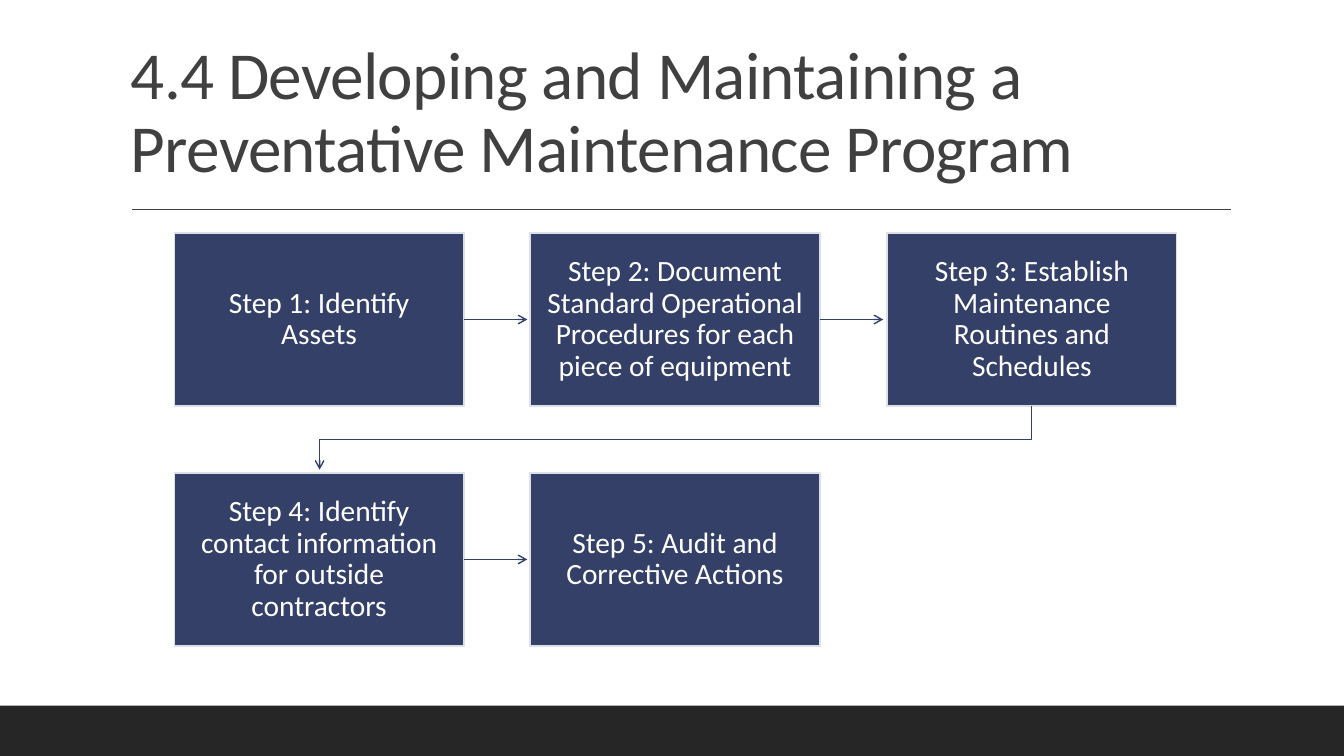
from lxml import etree
from pptx import Presentation
from pptx.dml.color import RGBColor
from pptx.enum.shapes import MSO_CONNECTOR, MSO_SHAPE
from pptx.enum.text import MSO_ANCHOR, PP_ALIGN
from pptx.oxml.ns import qn
from pptx.util import Pt

PX = 9144  # 100 px to the inch
RECT, STRAIGHT = MSO_SHAPE.RECTANGLE, MSO_CONNECTOR.STRAIGHT
BOTTOM, MIDDLE = MSO_ANCHOR.BOTTOM, MSO_ANCHOR.MIDDLE
LEFT, CENTER = PP_ALIGN.LEFT, PP_ALIGN.CENTER
NAVY, GREY, DARK, PALE, WHITE = "344068", "404040", "262626", "D9E0E6", "FFFFFF"
BOX_W, BOX_H, COLUMNS = 287, 172, 3
LEFT_X, TOP_Y, PITCH_X, PITCH_Y = 173, 231, 353.5, 238
ARROW = 63
STEPS = [
    "Step 1: Identify Assets",
    "Step 2: Document Standard Operational Procedures for each piece of equipment",
    "Step 3: Establish Maintenance Routines and Schedules",
    "Step 4: Identify contact information for outside contractors",
    "Step 5: Audit and Corrective Actions",
]


def style_line(shape, color, arrow=False):
    """Give a 1 pt line without shadow, with an open arrowhead if asked."""
    shape.line.color.rgb = RGBColor.from_string(color)
    shape.line.width = Pt(1)
    if arrow:
        etree.SubElement(shape.line._ln, qn("a:tailEnd"), type="arrow")
    etree.SubElement(shape._element.spPr, qn("a:effectLst"))


def write(shape, text, size, color, align, anchor, margins):
    tf = shape.text_frame
    frame = dict(word_wrap=True, vertical_anchor=anchor)
    for side, margin in zip(("left", "top", "right", "bottom"), margins):
        frame["margin_" + side] = margin * PX
    for name, value in frame.items():
        setattr(tf, name, value)
    p = tf.paragraphs[0]
    p.alignment, p.line_spacing = align, 0.9
    r = p.add_run()
    r.text = text
    for name, value in dict(name="Calibri", size=Pt(size)).items():
        setattr(r.font, name, value)
    r.font.color.rgb = RGBColor.from_string(color)
    return r


prs = Presentation()
prs.slide_width, prs.slide_height = 1333 * PX, 750 * PX
s = prs.slides.add_slide(prs.slide_layouts[6])

footer = s.shapes.add_shape(RECT, 0, 700 * PX, prs.slide_width, 50 * PX)
footer.shadow.inherit = False
footer.fill.solid()
footer.fill.fore_color.rgb = RGBColor.from_string(DARK)
footer.line.fill.background()

rule = s.shapes.add_connector(STRAIGHT, 131 * PX, 208 * PX, 1221 * PX, 208 * PX)
style_line(rule, GREY)

title = s.shapes.add_textbox(120 * PX, 31 * PX, 1100 * PX, 159 * PX)
r = write(title, "4.4 Developing and Maintaining a Preventative Maintenance Program",
          48, GREY, LEFT, BOTTOM, (10, 5, 10, 5))
r.font._element.set("spc", "-50")

for i, step in enumerate(STEPS):
    row, col = divmod(i, COLUMNS)
    x, y = int(LEFT_X + col * PITCH_X), TOP_Y + row * PITCH_Y
    box = s.shapes.add_shape(RECT, x * PX, y * PX, BOX_W * PX, BOX_H * PX)
    box.shadow.inherit = False
    box.fill.solid()
    box.fill.fore_color.rgb = RGBColor.from_string(NAVY)
    box.line.color.rgb = RGBColor.from_string(PALE)
    box.line.width = Pt(1.25)
    write(box, step, 21, WHITE, CENTER, MIDDLE, (14, 15, 14, 15))

    if i == len(STEPS) - 1:
        continue
    if col < COLUMNS - 1:
        start, mid = x + BOX_W, y + BOX_H // 2
        arrow = s.shapes.add_connector(STRAIGHT, start * PX, mid * PX,
                                       (start + ARROW) * PX, mid * PX)
        arrow.begin_connect(box, 3)
    else:
        start, end = x + BOX_W // 2, LEFT_X + BOX_W // 2 + 1
        top = y + BOX_H
        turn = top + 33
        path = s.shapes.build_freeform(start, top, scale=PX)
        path.add_line_segments([(start, turn), (end, turn), (end, top + ARROW)],
                               close=False)
        arrow = path.convert_to_shape()
        arrow.fill.background()
    style_line(arrow, NAVY, arrow=True)

prs.save("out.pptx")
